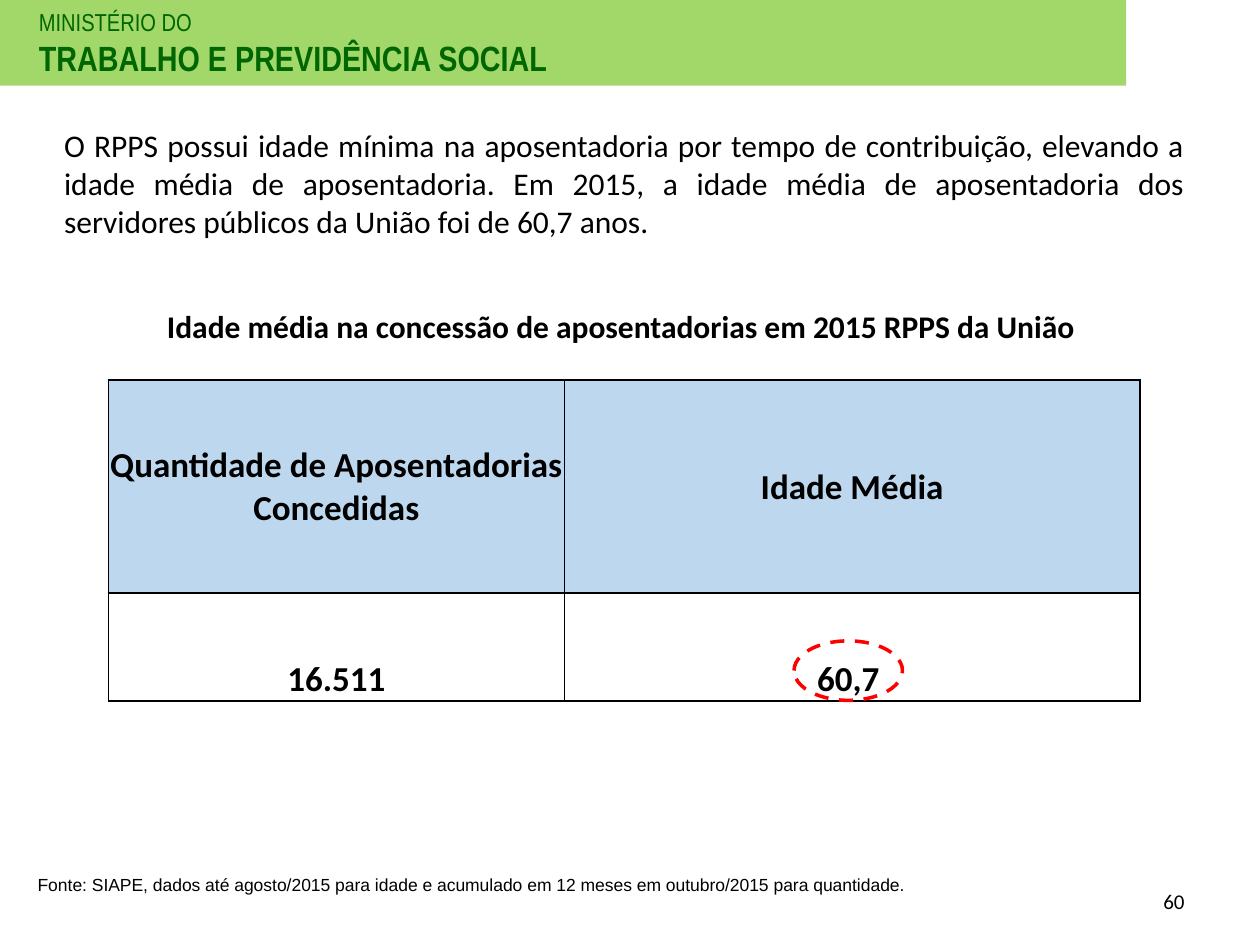
from dataclasses import dataclass

from lxml.etree import SubElement
from pptx import Presentation
from pptx.dml.color import RGBColor as RGB
from pptx.enum.dml import MSO_LINE
from pptx.enum.shapes import MSO_SHAPE as SHAPE
from pptx.enum.text import MSO_ANCHOR as ANCHOR, MSO_AUTO_SIZE as AUTO, PP_ALIGN as ALIGN
from pptx.oxml import parse_xml
from pptx.oxml.ns import nsdecls, qn
from pptx.util import Pt


@dataclass(frozen=True)
class Theme:
    band: str = "92D050"
    ministry: str = "006600"
    ink: str = "000000"
    header: str = "BDD7EE"
    mark: str = "FF0000"
    narrow: str = "Arial Narrow"
    sans: str = "Arial"
    body: str = "Calibri"
    small: int = 10
    number: int = 12
    overline: int = 14
    text: int = 18
    large: int = 20


T = Theme()


def points(box):
    return [Pt(v) for v in box]


def add_run(p, text, size, font=T.body, color=T.ink, bold=False):
    r = p.add_run()
    r.text = text
    for name, value in dict(name=font, size=Pt(size), bold=bold).items():
        setattr(r.font, name, value)
    r.font.color.rgb = RGB.from_string(color)


def add_text(s, box, lines, align=ALIGN.LEFT, anchor=ANCHOR.TOP):
    tf = s.shapes.add_textbox(*points(box)).text_frame
    frame = dict(word_wrap=True, auto_size=AUTO.NONE, vertical_anchor=anchor)
    for name, value in frame.items():
        setattr(tf, name, value)
    for i, line in enumerate(lines):
        p = tf.add_paragraph() if i else tf.paragraphs[0]
        p.alignment = align
        add_run(p, **line)


def add_banner(s, box):
    x, y, w, h = box
    sp = s.shapes.add_shape(SHAPE.RECTANGLE, *points(box))
    sp.shadow.inherit = False
    sp.line.fill.background()
    sp.fill.solid()
    sp.fill.fore_color.rgb = RGB.from_string(T.band)
    color = sp.fill._xPr.find(qn("a:solidFill"))[0]
    SubElement(color, qn("a:alpha"), val="85000")
    style = dict(font=T.narrow, color=T.ministry)
    add_text(s, (x + 15.1, y + 0.7, 414, h - 0.7), [
        dict(text="MINISTÉRIO DO", size=T.overline, **style),
        dict(text="TRABALHO E PREVIDÊNCIA SOCIAL", size=T.large, bold=True, **style),
    ])


def set_title(s, box, text):
    sp = s.shapes.title
    for name, value in zip(("left", "top", "width", "height"), points(box)):
        setattr(sp, name, value)
    tf = sp.text_frame
    for name, value in dict(word_wrap=True, auto_size=AUTO.NONE,
                            vertical_anchor=ANCHOR.MIDDLE).items():
        setattr(tf, name, value)
    p = tf.paragraphs[0]
    p.alignment = ALIGN.CENTER
    add_run(p, text, T.text, bold=True)


def add_borders(cell):
    tcPr = cell._tc.get_or_add_tcPr()
    for i, side in enumerate("LRTB"):
        tcPr.insert(i, parse_xml(
            f'<a:ln{side} {nsdecls("a")} w="{Pt(1)}"><a:solidFill>'
            f'<a:srgbClr val="{T.ink}"/></a:solidFill></a:ln{side}>'))


def add_age_table(s, box, col_widths, row_heights, rows):
    x, y, w, h = box
    table = s.shapes.add_table(len(rows), len(col_widths), *points(box)).table
    for col, width in zip(table.columns, col_widths):
        col.width = Pt(width)
    for row, height in zip(table.rows, row_heights):
        row.height = Pt(height)
    for i, row in enumerate(rows):
        for j, text in enumerate(row):
            cell = table.cell(i, j)
            fmt = dict(margin_left=Pt(0.7), margin_right=Pt(0.7), margin_top=Pt(0.7),
                       margin_bottom=0,
                       vertical_anchor=ANCHOR.BOTTOM if i else ANCHOR.MIDDLE)
            for name, value in fmt.items():
                setattr(cell, name, value)
            if i:
                cell.fill.background()
            else:
                cell.fill.solid()
                cell.fill.fore_color.rgb = RGB.from_string(T.header)
            add_borders(cell)
            p = cell.text_frame.paragraphs[0]
            p.alignment = ALIGN.CENTER
            add_run(p, text, T.large, bold=True)

    mark = s.shapes.add_shape(SHAPE.OVAL, *points((x + 391.7, y + 149, 62, 34)))
    mark.shadow.inherit = False
    mark.fill.background()
    mark.line.color.rgb = RGB.from_string(T.mark)
    for name, value in dict(width=Pt(2), dash_style=MSO_LINE.DASH).items():
        setattr(mark.line, name, value)


def add_footer(s, box, source, number):
    x, y, w, h = box
    add_text(s, (x, y, 647, 19.5), [dict(text=source, size=T.small, font=T.sans)])
    add_text(s, (x + w - 168, y + h - 29, 168, 29),
             [dict(text=number, size=T.number)], ALIGN.RIGHT, ANCHOR.MIDDLE)


def main():
    prs = Presentation()
    prs.slide_width, prs.slide_height = Pt(720), Pt(540)
    s = prs.slides.add_slide(prs.slide_layouts[5])
    add_banner(s, (0, 0, 643.5, 49))
    add_text(s, (29.5, 60.5, 654.5, 88), [dict(
        text="O RPPS possui idade mínima na aposentadoria por tempo de contribuição, "
             "elevando a idade média de aposentadoria. Em 2015, a idade média de "
             "aposentadoria dos servidores públicos da União foi de 60,7 anos. ",
        size=T.text)], ALIGN.JUSTIFY, ANCHOR.MIDDLE)
    set_title(s, (30, 160.5, 654, 51),
              "Idade média na concessão de aposentadorias em 2015 RPPS da União ")
    add_age_table(s, (62, 217.2, 589.5, 183.5), (260.5, 329), (121.7, 61.8), [
        ("Quantidade de Aposentadorias Concedidas", "Idade Média"),
        ("16.511", "60,7 "),
    ])
    add_footer(s, (14.4, 496, 669.6, 33.2),
               "Fonte: SIAPE, dados até agosto/2015 para idade e acumulado em 12 meses "
               "em outubro/2015 para quantidade.", "60")
    prs.save("out.pptx")


if __name__ == "__main__":
    main()
